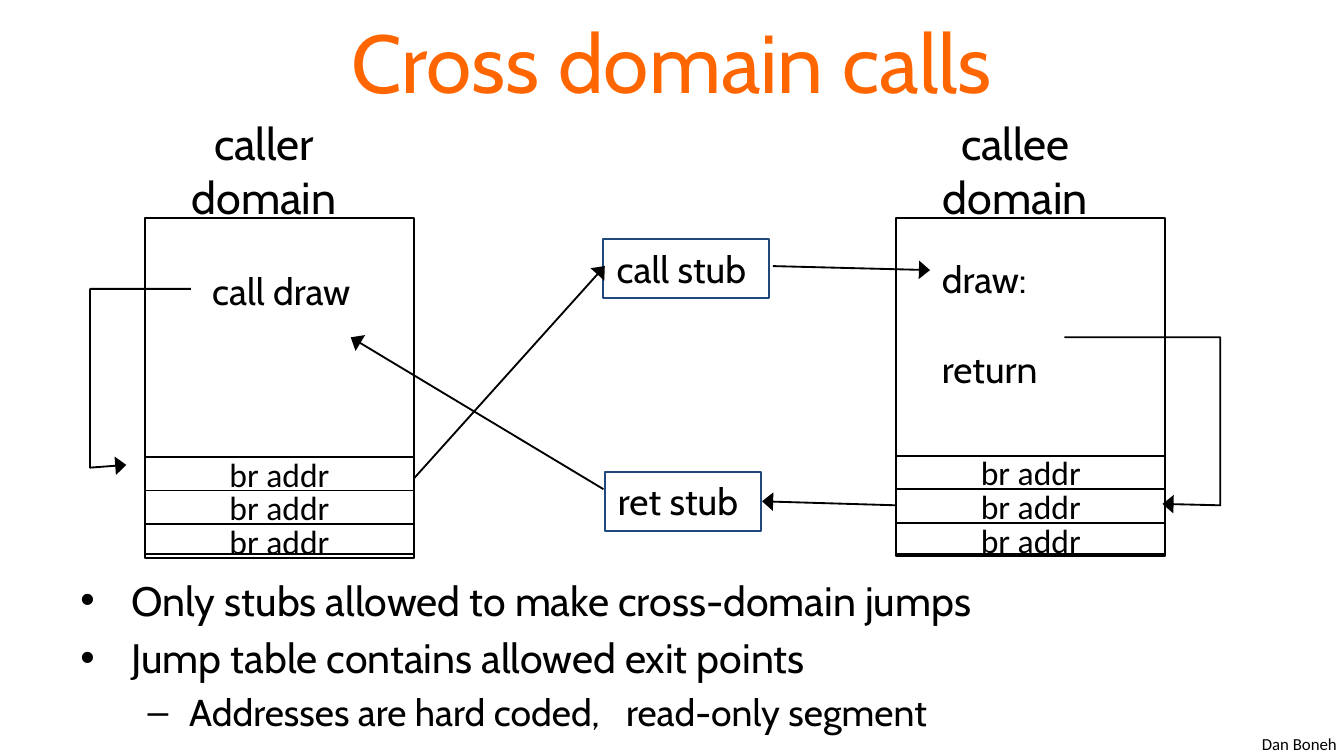
from lxml import etree
from pptx import Presentation
from pptx.dml.color import RGBColor
from pptx.enum.shapes import MSO_CONNECTOR, MSO_SHAPE
from pptx.enum.text import MSO_ANCHOR, PP_ALIGN
from pptx.oxml.ns import qn
from pptx.util import Inches, Pt

RECTANGLE, STRAIGHT = MSO_SHAPE.RECTANGLE, MSO_CONNECTOR.STRAIGHT
TOP, MIDDLE = MSO_ANCHOR.TOP, MSO_ANCHOR.MIDDLE
LEFT, CENTER = PP_ALIGN.LEFT, PP_ALIGN.CENTER

WIDTH = Inches(10)
HEIGHT = WIDTH * 9 // 16
COLUMN, ROW = WIDTH / 100, HEIGHT / 56.25
COLORS = {"ink": "000000", "title": "FF6600", "stub": "1F497D"}

TITLE = {"name": "Cabin", "size": Pt(44)}
CAPTION = {"name": "Cabin", "size": Pt(24)}
CODE = {"name": "Cabin", "size": Pt(20)}
POINT = {"name": "Cabin", "size": Pt(22)}
ADDRESS = {"name": "Calibri", "size": Pt(18)}
FOOTER = {"name": "Calibri", "size": Pt(9)}

DOMAIN_TOP, DOMAIN_COLUMNS, DOMAIN_ROWS = 16.2, 20, 25
ENTRY_ROWS, ENTRY_COUNT = 2.5, 3
DOMAINS = [("caller", 10.8, 34), ("callee", 66.7, 33.9)]
STUBS = [("call stub", 44.9, 17.8, 12.3), ("ret stub", 45, 35.1, 11.6)]
CALLS = [
    ((30.8, 35.6), (45, 19.8)),
    ((57.5, 19.8), (69.2, 20.1)),
    ((66.7, 37.6), (56.7, 37.3)),
    ((44.9, 36.4), (26.1, 25.1)),
]
TABLE_JUMPS = [
    [(14.2, 21.5), (6.7, 21.5), (6.7, 34.8), (9.4, 34.6)],
    [(79.2, 25.1), (90.8, 25.1), (90.8, 37.6), (86.5, 37.5)],
]
POINTS = [
    ("Only stubs allowed to make cross-domain jumps", "•", 0.38, 0.38, POINT),
    ("Jump table contains allowed exit points", "•", 0.38, 0.38, POINT),
    ("Addresses are hard coded,\tread-only segment", "–", 0.81, 0.31, CODE),
]
READ_ONLY_TAB = 4.06


def grid(*cells):
    """Turn alternating column and row counts into slide lengths."""
    return [round(cell * unit) for cell, unit in zip(cells, (COLUMN, ROW) * 2)]


def apply(target, values):
    """Set every attribute named in values."""
    for attribute, value in values.items():
        setattr(target, attribute, value)


def write(frame, lines, font, align=LEFT, anchor=TOP, wrap=False, color="ink", gap=0):
    """Write one paragraph per line in a shared format."""
    apply(frame, {"word_wrap": wrap, "vertical_anchor": anchor})
    for number, line in enumerate(lines):
        paragraph = frame.add_paragraph() if number else frame.paragraphs[0]
        apply(paragraph, {"alignment": align, "space_before": Pt(gap * bool(number))})
        run = paragraph.add_run()
        run.text = line
        apply(run.font, font)
        run.font.color.rgb = RGBColor.from_string(COLORS[color])


def add_label(slide, cells, lines, font, **layout):
    """Add free-standing text."""
    label = slide.shapes.add_textbox(*grid(*cells))
    write(label.text_frame, lines, font, **layout)


def outline(figure, color="ink"):
    """Give a figure a one-point line."""
    figure.line.color.rgb = RGBColor.from_string(COLORS[color])
    figure.line.width = Pt(1)


def add_box(slide, cells, color="ink"):
    """Add an unfilled rectangle."""
    box = slide.shapes.add_shape(RECTANGLE, *grid(*cells))
    box.fill.background()
    box.shadow.inherit = False
    outline(box, color)
    return box


def point_arrow(figure):
    """End a figure's line with a wide triangle."""
    line = figure.element.spPr.find(qn("a:ln"))
    etree.SubElement(line, qn("a:tailEnd"), type="triangle", w="lg", len="med")


def add_call(slide, start, end):
    """Add a straight arrow."""
    call = slide.shapes.add_connector(STRAIGHT, *grid(*start, *end))
    outline(call)
    point_arrow(call)
    etree.SubElement(call.element.spPr, qn("a:effectLst"))


def add_table_jump(slide, stops):
    """Add a bent arrow through the given stops."""
    start, *bends = [grid(*stop) for stop in stops]
    builder = slide.shapes.build_freeform(*start)
    builder.add_line_segments(bends, close=False)
    jump = builder.convert_to_shape()
    jump.fill.background()
    jump.shadow.inherit = False
    outline(jump)
    point_arrow(jump)


def add_domain(slide, role, left, table_top):
    """Add a captioned domain with its jump table."""
    add_box(slide, (left, DOMAIN_TOP, DOMAIN_COLUMNS, DOMAIN_ROWS))
    add_label(slide, (left + 2.4, 8.1, 12.9, 9.1), [role, "domain"], CAPTION, align=CENTER)
    for number in range(ENTRY_COUNT):
        top = table_top + number * ENTRY_ROWS
        entry = add_box(slide, (left, top, DOMAIN_COLUMNS, ENTRY_ROWS))
        write(entry.text_frame, ["br addr"], ADDRESS, align=CENTER, anchor=MIDDLE)


def add_stub(slide, name, left, top, columns):
    """Add a named stub."""
    stub = add_box(slide, (left, top, columns, 4.4), "stub")
    write(stub.text_frame, [name], CODE)


def add_points(slide):
    """Add the bulleted conclusions."""
    frame = slide.shapes.add_textbox(*grid(5, 42.3, 91.7, 13.3)).text_frame
    write(frame, [point[0] for point in POINTS], POINT, wrap=True)
    for paragraph, (_, mark, margin, hang, font) in zip(frame.paragraphs, POINTS):
        apply(paragraph.runs[0].font, font)
        paragraph.space_before = Pt(font["size"].pt * 0.2)
        properties = paragraph._p.get_or_add_pPr()
        properties.set("marL", str(Inches(margin)))
        properties.set("indent", str(-Inches(hang)))
        etree.SubElement(properties, qn("a:buFont"), typeface="Arial")
        etree.SubElement(properties, qn("a:buChar"), char=mark)
    tabs = etree.SubElement(properties, qn("a:tabLst"))
    etree.SubElement(tabs, qn("a:tab"), pos=str(Inches(READ_ONLY_TAB)), algn="l")


def main():
    """Build the slide on cross domain calls."""
    deck = Presentation()
    apply(deck, {"slide_width": WIDTH, "slide_height": HEIGHT})
    slide = deck.slides.add_slide(deck.slide_layouts[6])
    add_label(slide, (92.9, 54.1, 7.6, 2.5), ["Dan Boneh"], FOOTER)
    add_label(slide, (5, -0.2, 90, 9.4), ["Cross domain calls"], TITLE,
              align=CENTER, anchor=MIDDLE, wrap=True, color="title")
    for domain in DOMAINS:
        add_domain(slide, *domain)
    add_label(slide, (14.8, 19.5, 13, 4.4), ["call draw"], CODE)
    add_label(slide, (69.1, 18.6, 9.6, 11.1), ["draw:", "return"], CODE, gap=24)
    for stub in STUBS:
        add_stub(slide, *stub)
    for call in CALLS:
        add_call(slide, *call)
    for stops in TABLE_JUMPS:
        add_table_jump(slide, stops)
    add_points(slide)
    deck.save("out.pptx")


if __name__ == "__main__":
    main()
